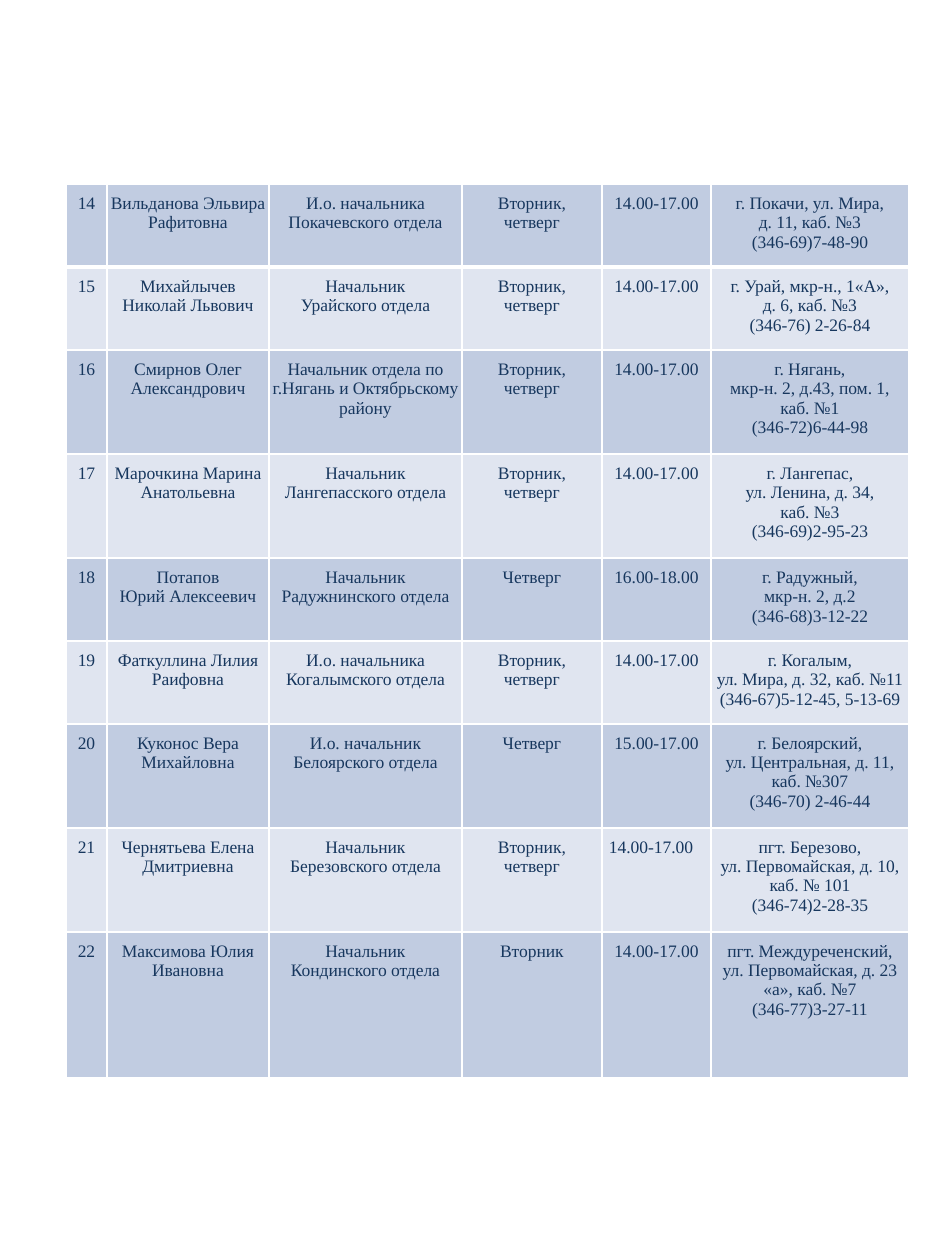
from dataclasses import dataclass
from itertools import cycle

from lxml.etree import SubElement
from pptx import Presentation
from pptx.dml.color import RGBColor as Rgb
from pptx.enum.text import MSO_ANCHOR as Anchor, PP_ALIGN as Align
from pptx.oxml.ns import qn
from pptx.util import Emu, Pt

EMU_PER_PX = 914400 / 126


@dataclass(frozen=True)
class Theme:
    font: str = "Times New Roman"
    size: int = 10
    ink: str = "17375E"
    dark_band: str = "C1CCE1"
    light_band: str = "E0E5F0"
    rule: str = "FFFFFF"
    thin: int = 1
    thick: int = 3


THEME = Theme()

SLIDE_SIZE = (945, 1260)
TABLE_ORIGIN = (66, 184)
COLUMN_WIDTHS = (41, 162, 193, 140, 109, 198)
THREE_LINES, FOUR_LINES, LAST_ROW = 83, 104, 146
ROW_HEIGHTS = (THREE_LINES, THREE_LINES, FOUR_LINES, FOUR_LINES, THREE_LINES,
               THREE_LINES, FOUR_LINES, FOUR_LINES, LAST_ROW)
SIDE_INSET, TOP_INSET, LEFT_TIME_INSET = 2, 10, 7
FIRST_NUMBER = 14
TIME_COLUMN = 4
LEFT_TIME_NUMBER = 21

BOTH_DAYS = "Вторник,|четверг"
AFTERNOON = "14.00-17.00"

RECEPTIONS = [
    ("Вильданова Эльвира Рафитовна", "И.о. начальника Покачевского отдела",
     BOTH_DAYS, AFTERNOON,
     "г. Покачи, ул. Мира,|д. 11, каб. №3|(346-69)7-48-90"),
    ("Михайлычев Николай Львович", "Начальник|Урайского отдела",
     BOTH_DAYS, AFTERNOON,
     "г. Урай, мкр-н., 1«А»,|д. 6, каб. №3|(346-76) 2-26-84"),
    ("Смирнов Олег Александрович",
     "Начальник отдела по г.Нягань и Октябрьскому району",
     BOTH_DAYS, AFTERNOON,
     "г. Нягань,|мкр-н. 2, д.43, пом. 1,|каб. №1|(346-72)6-44-98"),
    ("Марочкина Марина Анатольевна", "Начальник Лангепасского отдела",
     BOTH_DAYS, AFTERNOON,
     "г. Лангепас,|ул. Ленина, д. 34,|каб. №3|(346-69)2-95-23"),
    ("Потапов|Юрий Алексеевич", "Начальник Радужнинского отдела",
     "Четверг", "16.00-18.00",
     "г. Радужный,|мкр-н. 2, д.2|(346-68)3-12-22"),
    ("Фаткуллина Лилия Раифовна", "И.о. начальника Когалымского отдела",
     BOTH_DAYS, AFTERNOON,
     "г. Когалым,|ул. Мира, д. 32, каб. №11|(346-67)5-12-45, 5-13-69"),
    ("Куконос Вера Михайловна", "И.о. начальник Белоярского отдела",
     "Четверг", "15.00-17.00",
     "г. Белоярский,|ул. Центральная, д. 11, каб. №307|(346-70) 2-46-44"),
    ("Чернятьева Елена Дмитриевна", "Начальник|Березовского отдела",
     BOTH_DAYS, AFTERNOON,
     "пгт. Березово,|ул. Первомайская, д. 10, каб. № 101|(346-74)2-28-35"),
    ("Максимова Юлия|Ивановна", "Начальник|Кондинского отдела",
     "Вторник", AFTERNOON,
     "пгт. Междуреченский,|ул. Первомайская, д. 23 «а», каб. №7"
     "|(346-77)3-27-11"),
]


def px(length):
    return Emu(round(length * EMU_PER_PX))


def draw_borders(cell, top, bottom):
    properties = cell._tc.get_or_add_tcPr()
    sides = {"L": THEME.thin, "R": THEME.thin, "T": top, "B": bottom}
    for side, points in sides.items():
        border = SubElement(properties, qn(f"a:ln{side}"), w=str(Pt(points)))
        paint = SubElement(border, qn("a:solidFill"))
        SubElement(paint, qn("a:srgbClr"), val=THEME.rule)


def paint_cell(cell, band):
    cell.fill.solid()
    cell.fill.fore_color.rgb = Rgb.from_string(band)


def write_cell(cell, text, align, left_inset):
    cell.margin_left, cell.margin_right = px(left_inset), px(SIDE_INSET)
    cell.margin_top = cell.margin_bottom = px(TOP_INSET)
    cell.vertical_anchor = Anchor.TOP
    frame = cell.text_frame
    for index, line in enumerate(text.split("|")):
        paragraph = frame.add_paragraph() if index else frame.paragraphs[0]
        paragraph.alignment = align
        run = paragraph.add_run()
        run.text = line
        run.font.name = THEME.font
        run.font.size = Pt(THEME.size)
        run.font.color.rgb = Rgb.from_string(THEME.ink)


def add_schedule(slide):
    left, top = TABLE_ORIGIN
    schedule = slide.shapes.add_table(
        len(RECEPTIONS), len(COLUMN_WIDTHS), px(left), px(top),
        px(sum(COLUMN_WIDTHS)), px(sum(ROW_HEIGHTS))).table
    schedule.first_row = schedule.horz_banding = False
    for column, width in zip(schedule.columns, COLUMN_WIDTHS):
        column.width = px(width)
    for row, height in zip(schedule.rows, ROW_HEIGHTS):
        row.height = px(height)

    bands = cycle((THEME.dark_band, THEME.light_band))
    for index, (reception, band) in enumerate(zip(RECEPTIONS, bands)):
        number = FIRST_NUMBER + index
        top_rule = THEME.thick if index == 1 else THEME.thin
        bottom_rule = THEME.thick if index == 0 else THEME.thin
        for position, text in enumerate((str(number), *reception)):
            cell = schedule.cell(index, position)
            draw_borders(cell, top_rule, bottom_rule)
            paint_cell(cell, band)
            if (number, position) == (LEFT_TIME_NUMBER, TIME_COLUMN):
                write_cell(cell, text, Align.LEFT, LEFT_TIME_INSET)
            else:
                write_cell(cell, text, Align.CENTER, SIDE_INSET)


def main():
    deck = Presentation()
    deck.slide_width, deck.slide_height = map(px, SLIDE_SIZE)
    blank_layout = deck.slide_layouts[6]
    add_schedule(deck.slides.add_slide(blank_layout))
    deck.save("out.pptx")


if __name__ == "__main__":
    main()
